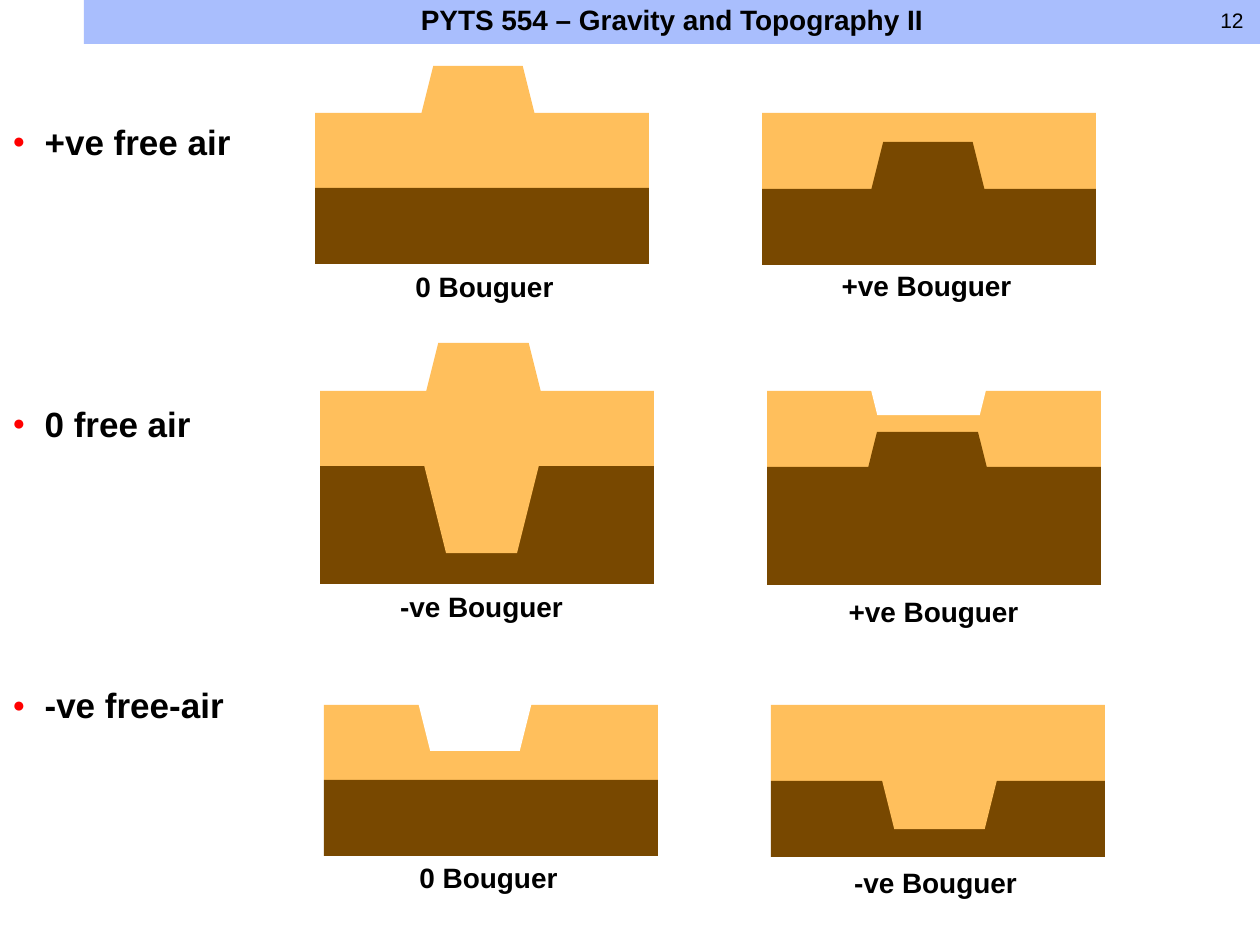
"""Build a slide of crust and mantle sections sorted by their gravity anomalies."""
import pptx
import pptx.util
import pptx.dml.color
import pptx.enum.shapes
import pptx.enum.text
import pptx.oxml
import pptx.oxml.ns

PX = 914400 / 126
BAR = pptx.dml.color.RGBColor(0xA9, 0xBE, 0xFD)
CRUST = pptx.dml.color.RGBColor(0xFF, 0xBF, 0x5C)
MANTLE = pptx.dml.color.RGBColor(0x78, 0x48, 0x00)
SKY = pptx.dml.color.RGBColor(0xFF, 0xFF, 0xFF)
INK = pptx.dml.color.RGBColor(0x00, 0x00, 0x00)
KIND = pptx.enum.shapes.MSO_SHAPE
ANCHOR = pptx.enum.text.MSO_ANCHOR
CENTER = pptx.enum.text.PP_ALIGN.CENTER


def px(*lengths):
    return [round(length * PX) for length in lengths]


def write(para, text, size, bold=True, **layout):
    span = para.add_run()
    span.text = text
    for name, value in layout.items():
        setattr(para, name, value)
    font = {"name": "Arial", "size": pptx.util.Pt(size), "bold": bold}
    for name, value in font.items():
        setattr(span.font, name, value)
    span.font.color.rgb = INK


deck = pptx.Presentation()
deck.slide_width, deck.slide_height = px(1260, 945)
page = deck.slides.add_slide(deck.slide_layouts[1])

title = page.shapes.title
title.left, title.top, title.width, title.height = px(84, 0, 1176, 44)
title.fill.solid()
title.fill.fore_color.rgb = BAR
title.text_frame.vertical_anchor = ANCHOR.TOP
title.text_frame.auto_size = pptx.enum.text.MSO_AUTO_SIZE.NONE
write(title.text_frame.paragraphs[0], "PYTS 554 – Gravity and Topography II", 16,
      alignment=CENTER, line_spacing=0.89, space_before=pptx.util.Pt(0))

number = page.shapes.add_textbox(*px(1196, 5, 72, 30))
number.text_frame.word_wrap = False
number.text_frame.vertical_anchor = ANCHOR.MIDDLE
write(number.text_frame.paragraphs[0], "12", 12, bold=False, alignment=CENTER)

body = page.placeholders[1]
body.left, body.top, body.width, body.height = px(0, 114, 315, 781)
body.text_frame.auto_size = pptx.enum.text.MSO_AUTO_SIZE.NONE
namespace = pptx.oxml.ns.nsdecls("a")
for index, heading in enumerate(["+ve free air", "0 free air", "-ve free-air"]):
    para = body.text_frame.add_paragraph() if index else body.text_frame.paragraphs[0]
    properties = para._p.get_or_add_pPr()
    indent = px(32)[0]
    properties.set("marL", str(indent))
    properties.set("indent", str(-indent))
    for bullet in ('<a:buClr {}><a:srgbClr val="FF0000"/></a:buClr>',
                   '<a:buSzPct {} val="60000"/>',
                   '<a:buFont {} typeface="Arial"/>',
                   '<a:buChar {} char="●"/>'):
        properties.append(pptx.oxml.parse_xml(bullet.format(namespace)))
    write(para, heading, 20, space_before=pptx.util.Pt(137 if index else 0))

SECTIONS = [
    (315, 113, 75, 76, [(421, 66, 114, 49, 0, CRUST)], "0 Bouguer", 349, 267),
    (762, 113, 76, 76, [(871, 142, 114, 49, 0, MANTLE)], "+ve Bouguer", 791, 266),
    (320, 391, 75, 118, [(426, 343, 115, 49, 0, CRUST),
                         (424, 465, 115, 88, 180, CRUST)], "-ve Bouguer", 346, 587),
    (767, 391, 76, 118, [(871, 390, 115, 25, 180, SKY),
                         (868, 432, 119, 36, 0, MANTLE)], "+ve Bouguer", 798, 592),
    (324, 705, 75, 76, [(418, 702, 114, 49, 180, SKY)], "0 Bouguer", 353, 858),
    (771, 705, 76, 76, [(882, 780, 115, 49, 180, CRUST)], "-ve Bouguer", 800, 863),
]
for left, top, crust, mantle, features, label, label_left, label_top in SECTIONS:
    layers = [(KIND.RECTANGLE, left, top, 334, crust, 0, CRUST),
              (KIND.RECTANGLE, left, top + crust, 334, mantle, 0, MANTLE)]
    layers += [(KIND.TRAPEZOID, *feature) for feature in features]
    for kind, x, y, width, height, turn, color in layers:
        shape = page.shapes.add_shape(kind, *px(x, y, width, height))
        shape.shadow.inherit = False
        shape.rotation = turn
        shape.fill.solid()
        shape.fill.fore_color.rgb = color
        shape.line.fill.background()
    box = page.shapes.add_textbox(*px(label_left, label_top, 271, 44))
    box.text_frame.word_wrap = True
    write(box.text_frame.paragraphs[0], label, 16, alignment=CENTER, line_spacing=0.89)

deck.save("out.pptx")
